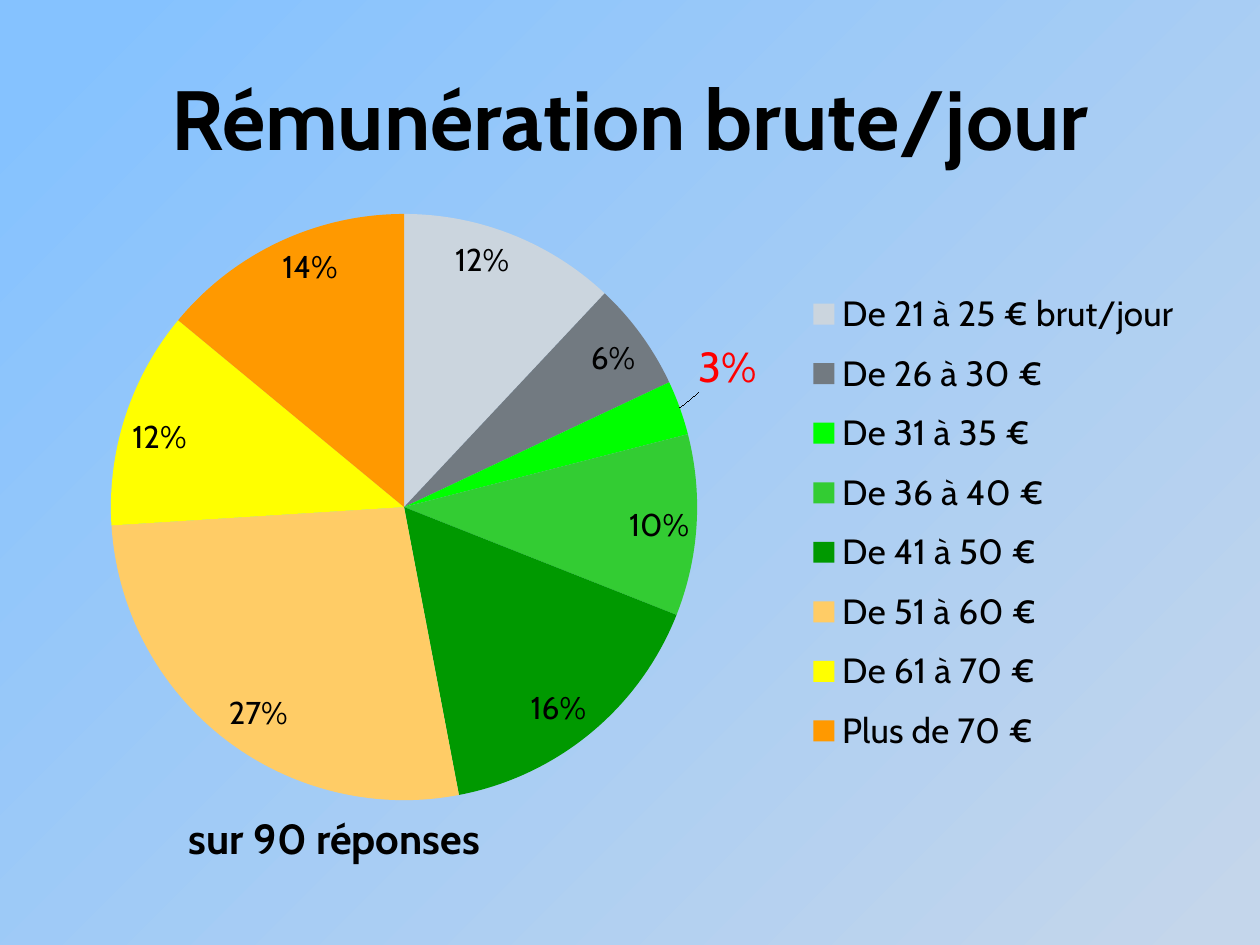
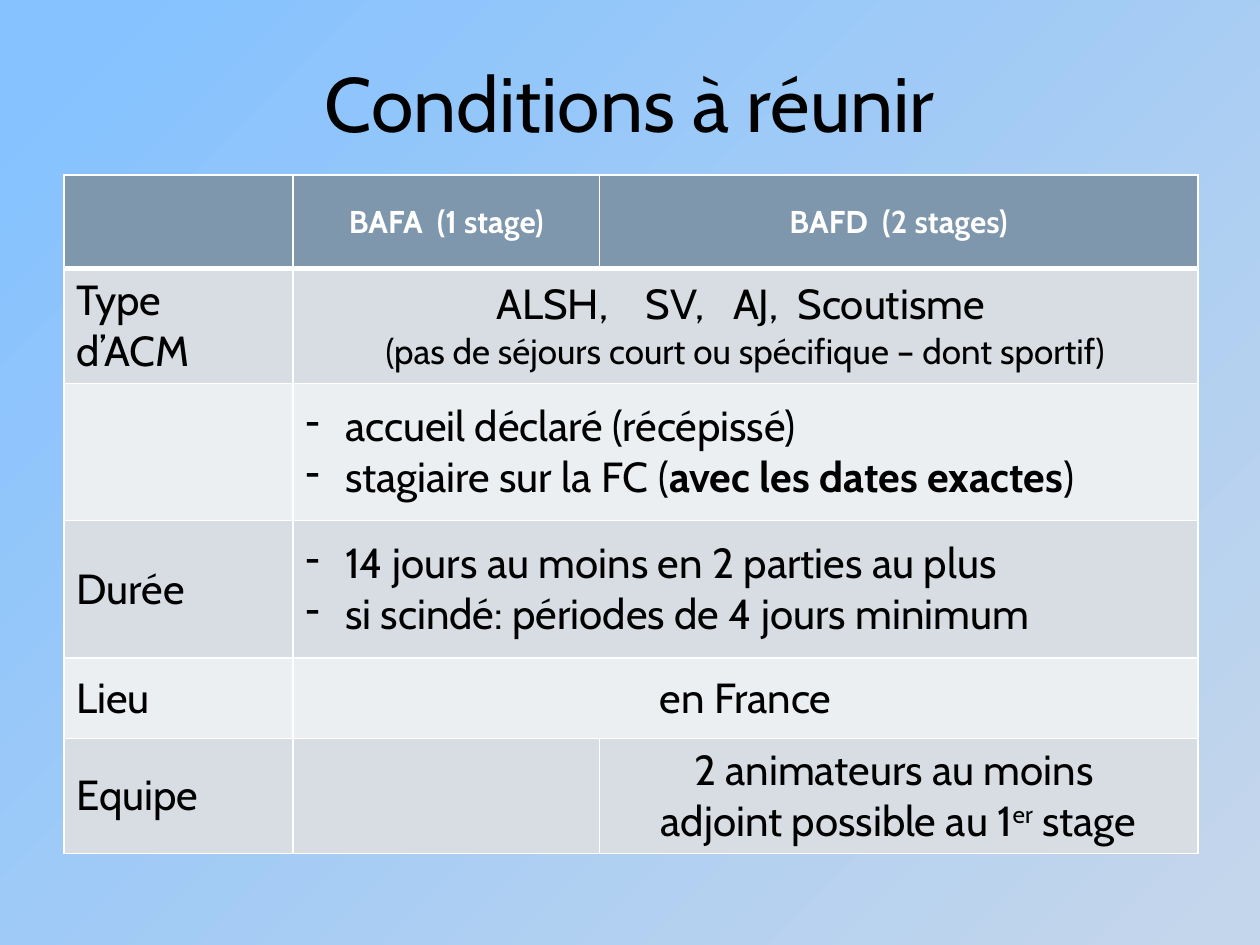
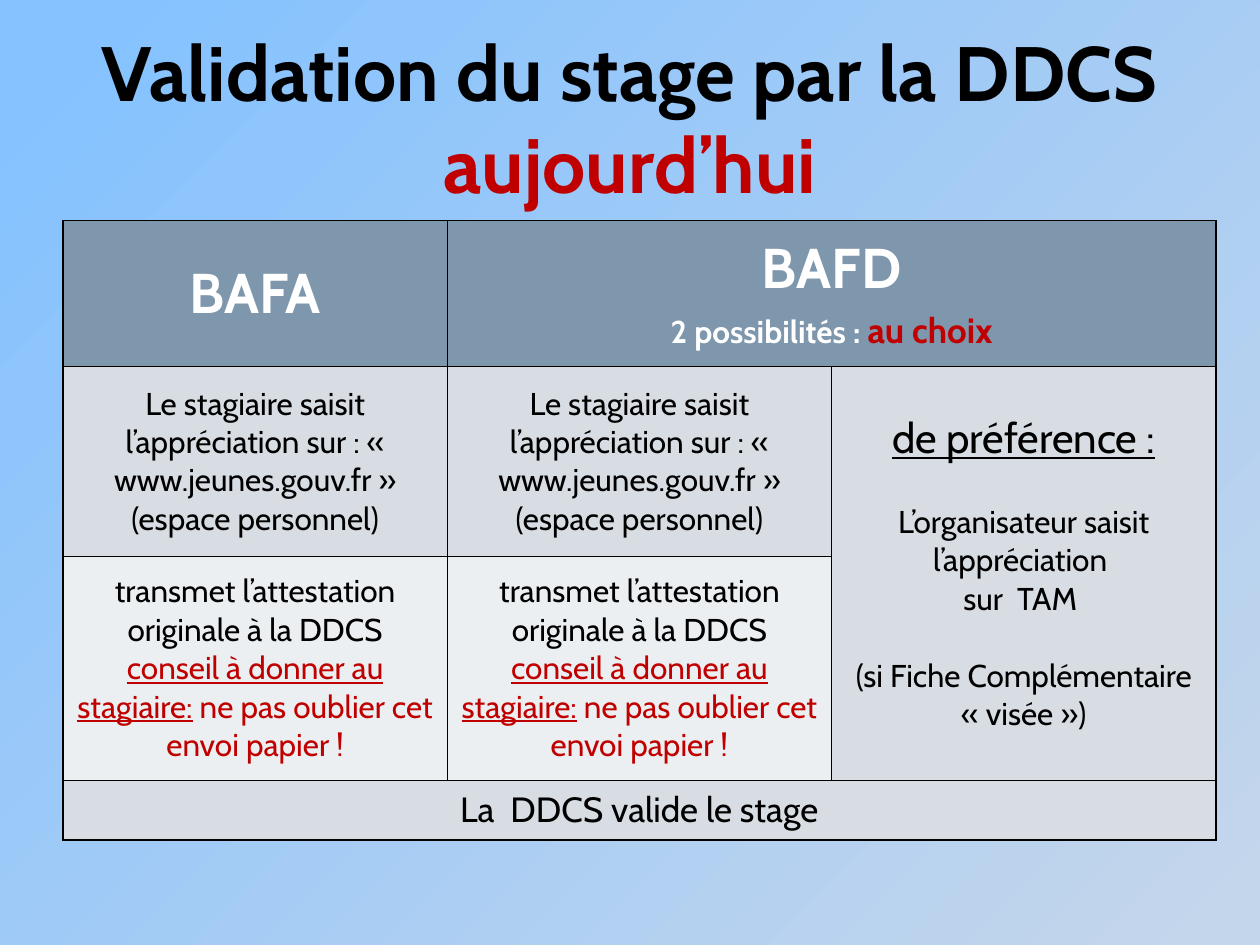
from lxml import etree
from pptx import Presentation
from pptx.chart.data import CategoryChartData
from pptx.dml.color import RGBColor
from pptx.enum.chart import XL_CHART_TYPE, XL_LABEL_POSITION, XL_LEGEND_POSITION
from pptx.enum.text import MSO_ANCHOR, MSO_AUTO_SIZE, PP_ALIGN
from pptx.oxml.ns import qn
from pptx.util import Pt

PIE = XL_CHART_TYPE.PIE
INSIDE_END, OUTSIDE_END = XL_LABEL_POSITION.INSIDE_END, XL_LABEL_POSITION.OUTSIDE_END
LEGEND_RIGHT = XL_LEGEND_POSITION.RIGHT
MIDDLE = MSO_ANCHOR.MIDDLE
NO_FIT = MSO_AUTO_SIZE.NONE
LEFT, CENTER = PP_ALIGN.LEFT, PP_ALIGN.CENTER

FONT = "Cabin"
TITLE_ONLY = 5
BLACK = RGBColor(0x00, 0x00, 0x00)
WHITE = RGBColor(0xFF, 0xFF, 0xFF)
RED = RGBColor(0xFF, 0x00, 0x00)
DARK_RED = RGBColor(0xC0, 0x00, 0x00)
SKY = RGBColor(0x85, 0xC2, 0xFF)
MIST = RGBColor(0xC4, 0xD6, 0xEB)
SLATE = RGBColor(0x7E, 0x97, 0xAD)
GREY = RGBColor(0xD8, 0xDD, 0xE3)
PALE = RGBColor(0xEC, 0xEF, 0xF1)

# Pay per day: category, percent, slice colour
PAY = [
    ("De 21 à 25 € brut/jour", 12, RGBColor(0xCB, 0xD5, 0xDE)),
    ("De 26 à 30 €", 6, RGBColor(0x72, 0x7A, 0x81)),
    ("De 31 à 35 €", 3, RGBColor(0x00, 0xFF, 0x00)),
    ("De 36 à 40 €", 10, RGBColor(0x33, 0xCC, 0x33)),
    ("De 41 à 50 €", 16, RGBColor(0x00, 0x99, 0x00)),
    ("De 51 à 60 €", 27, RGBColor(0xFF, 0xCC, 0x66)),
    ("De 61 à 70 €", 12, RGBColor(0xFF, 0xFF, 0x00)),
    ("Plus de 70 €", 14, RGBColor(0xFF, 0x99, 0x00)),
]
SMALLEST = 2


# Content helpers: a paragraph is a dict holding (text, style) spans
def line(*spans, align=CENTER, before=0, bullet=False):
    return {"spans": spans, "align": align, "before": before, "bullet": bullet}


def plain(text, size=24, align=CENTER, before=0, **style):
    return line((text, {"size": size, **style}), align=align, before=before)


def dashed(*spans):
    return line(*spans, align=LEFT, bullet=True)


BODY = {"size": 24}
HEAD = {"bold": True, "color": WHITE}
CONDITIONS = {
    "left": 36.5, "top": 100,
    "columns": [131, 175, 342],
    "rows": [53.5, 52, 78.5, 78.5, 46, 59],
    "fills": [SLATE, GREY, PALE, GREY, PALE, GREY],
    "border": WHITE, "header_rule": 3,
    "merges": [(row, 1, row, 2) for row in range(1, 5)],
    "cells": {
        (0, 1): [plain("BAFA  (1 stage)", 18, **HEAD)],
        (0, 2): [plain("BAFD  (2 stages)", 18, **HEAD)],
        (1, 0): [plain("Type d’ACM", align=LEFT)],
        (1, 1): [plain("ALSH,    SV,   AJ,  Scoutisme "),
                 plain("(pas de séjours court ou spécifique – dont sportif)", 20)],
        (2, 1): [dashed(("accueil déclaré (récépissé)", BODY)),
                 dashed(("stagiaire sur la FC (", BODY),
                        ("avec les dates exactes", {"size": 24, "bold": True}),
                        (")", BODY))],
        (3, 0): [plain("Durée", align=LEFT)],
        (3, 1): [dashed(("14 jours au moins en 2 parties au plus", BODY)),
                 dashed(("si scindé: périodes de 4 jours minimum", BODY))],
        (4, 0): [plain("Lieu", align=LEFT)],
        (4, 1): [plain("en France")],
        (5, 0): [plain("Equipe", align=LEFT)],
        (5, 2): [plain("2 animateurs au moins "),
                 line(("adjoint possible au 1", BODY),
                      ("er", {"size": 24, "raised": True}), (" stage", BODY))],
    },
}

ENTRY = [plain("Le stagiaire saisit l’appréciation sur : « www.jeunes.gouv.fr »", 18),
         plain("(espace personnel)", 18)]
MAILING = [
    plain("transmet l’attestation originale à la DDCS", 18),
    line(("conseil à donner au stagiaire:",
          {"size": 18, "color": DARK_RED, "underline": True}),
         (" ne pas oublier cet envoi papier !", {"size": 18, "color": DARK_RED})),
]
VALIDATION = {
    "left": 36, "top": 126,
    "columns": [219.6] * 3,
    "rows": [83.5, 108.5, 128, 34],
    "fills": [SLATE, GREY, PALE, GREY],
    "border": BLACK, "header_rule": 1,
    "merges": [(0, 1, 0, 2), (1, 2, 2, 2), (3, 0, 3, 2)],
    "cells": {
        (0, 0): [plain("BAFA", 32, **HEAD)],
        (0, 1): [plain("BAFD", 32, **HEAD),
                 line(("2 possibilités : ", {"size": 18, **HEAD}),
                      ("au choix", {"size": 20, "bold": True, "color": DARK_RED}),
                      before=4)],
        (1, 0): ENTRY,
        (1, 1): ENTRY,
        (1, 2): [plain("de préférence :", underline=True),
                 plain("L’organisateur saisit l’appréciation ", 18, before=22),
                 plain("sur  TAM ", 18),
                 plain("(si Fiche Complémentaire", 18, before=22),
                 plain("« visée »)", 18)],
        (2, 0): MAILING,
        (2, 1): MAILING,
        (3, 0): [plain("La  DDCS valide le stage", 20)],
    },
}


# Text
def style_font(font, size, color=BLACK, bold=False, underline=False):
    font.name, font.size = FONT, Pt(size)
    font.bold, font.underline = bold, underline
    font.color.rgb = color


def write(frame, paragraphs):
    for index, content in enumerate(paragraphs):
        para = frame.add_paragraph() if index else frame.paragraphs[0]
        para.alignment = content["align"]
        para.space_before = Pt(content["before"])
        if content["bullet"]:
            props = para._p.get_or_add_pPr()
            props.set("marL", str(Pt(22.5)))
            props.set("indent", str(-Pt(22.5)))
            etree.SubElement(props, qn("a:buChar")).set("char", "-")
        for text, style in content["spans"]:
            span = para.add_run()
            span.text = text
            style_font(span.font, **{k: v for k, v in style.items() if k != "raised"})
            if "raised" in style:
                span.font._element.set("baseline", "30000")


def add_page(deck, title, size, height, bold):
    page = deck.slides.add_slide(deck.slide_layouts[TITLE_ONLY])
    box = page.shapes.title
    box.left, box.top, box.width, box.height = Pt(36), Pt(21.6), Pt(648), Pt(height)
    frame = box.text_frame
    frame.text = title
    frame.auto_size, frame.vertical_anchor = NO_FIT, MIDDLE
    para = frame.paragraphs[0]
    para.alignment = CENTER
    for span in para.runs:
        style_font(span.font, size, bold=bold)
    return page


# Tables
def set_borders(cell, color, widths):
    props = cell._tc.get_or_add_tcPr()
    for index, (side, width) in enumerate(widths.items()):
        edge = etree.Element(qn(f"a:ln{side}"), w=str(Pt(width)))
        fill = etree.SubElement(edge, qn("a:solidFill"))
        etree.SubElement(fill, qn("a:srgbClr")).set("val", str(color))
        props.insert(index, edge)


def add_grid(page, grid):
    columns, rows = grid["columns"], grid["rows"]
    table = page.shapes.add_table(
        len(rows), len(columns), Pt(grid["left"]), Pt(grid["top"]),
        Pt(sum(columns)), Pt(sum(rows))).table
    table.first_row = table.horz_banding = False
    for column, width in zip(table.columns, columns):
        column.width = Pt(width)
    for row, height in zip(table.rows, rows):
        row.height = Pt(height)
    for top, left, bottom, right in grid["merges"]:
        table.cell(top, left).merge(table.cell(bottom, right))
    for row, color in enumerate(grid["fills"]):
        widths = {"L": 1, "R": 1,
                  "T": grid["header_rule"] if row == 1 else 1,
                  "B": grid["header_rule"] if row == 0 else 1}
        for column in range(len(columns)):
            cell = table.cell(row, column)
            cell.vertical_anchor = MIDDLE
            cell.fill.solid()
            cell.fill.fore_color.rgb = color
            set_borders(cell, grid["border"], widths)
            write(cell.text_frame, grid["cells"].get((row, column), []))


# Chart
def set_layout(parent, index, **values):
    """Give a chart part a manual layout, as fractions of the chart."""
    for old in parent.findall(qn("c:layout")):
        parent.remove(old)
    layout = etree.Element(qn("c:layout"))
    manual = etree.SubElement(layout, qn("c:manualLayout"))
    for name, value in values.items():
        etree.SubElement(manual, qn(f"c:{name}")).set("val", str(value))
    parent.insert(index, layout)


def add_pay_chart(page):
    data = CategoryChartData()
    data.categories = [name for name, _, _ in PAY]
    data.add_series("Series 1", [value for _, value, _ in PAY])
    chart = page.shapes.add_chart(
        PIE, Pt(36.5), Pt(111.6), Pt(648), Pt(356.4), data).chart
    chart.has_title = False
    style_font(chart.font, 10)
    chart.has_legend = True
    chart.legend.position = LEGEND_RIGHT
    chart.legend.include_in_layout = False
    style_font(chart.legend.font, 20)
    chart.plots[0].vary_by_categories = True

    series = chart.plots[0].series[0]
    for index, (_, _, color) in enumerate(PAY):
        piece = series.points[index].format
        piece.fill.solid()
        piece.fill.fore_color.rgb = color
        piece.line.fill.background()

    labels = series.data_labels
    labels.show_percentage, labels.show_value = True, False
    labels.number_format, labels.number_format_is_linked = "0%", False
    labels.position = INSIDE_END
    style_font(labels.font, 18)

    # The smallest slice has its label outside, with a leader line
    label = series.points[SMALLEST].data_label
    style_font(label.font, 24, RED)
    label.position = OUTSIDE_END
    element = chart.element.xpath(".//c:dLbl")[0]
    element.find(qn("c:showVal")).set("val", "0")
    element.find(qn("c:showPercent")).set("val", "1")
    set_layout(element, 1, x=0.01, y=-0.02)

    edges = {"xMode": "edge", "yMode": "edge"}
    set_layout(chart.element.xpath(".//c:plotArea")[0], 0, layoutTarget="inner",
               **edges, x=0.04, y=0.03, w=0.52, h=0.94)
    set_layout(chart.legend._element, 1, **edges, x=0.65, y=0.13, w=0.34, h=0.79)


def main():
    deck = Presentation()
    deck.slide_width, deck.slide_height = Pt(720), Pt(540)

    # Shared background
    fill = deck.slide_master.background.fill
    fill.gradient()
    fill.gradient_angle = 315
    for stop, color, position in zip(fill.gradient_stops, (SKY, MIST), (0.05, 0.98)):
        stop.color.rgb, stop.position = color, position

    # Pay per day
    page = add_page(deck, "Rémunération brute/jour", 48, 90, True)
    add_pay_chart(page)
    box = page.shapes.add_textbox(Pt(100.8), Pt(460.8), Pt(482), Pt(36))
    box.text_frame.word_wrap = True
    write(box.text_frame, [plain("sur 90 réponses", align=LEFT, bold=True)])

    # Conditions
    add_grid(add_page(deck, "Conditions à réunir", 44, 73, False), CONDITIONS)

    # Validation
    page = add_page(deck, "Validation du stage par la DDCS\vaujourd’hui", 44, 90, True)
    page.shapes.title.text_frame.paragraphs[0].runs[-1].font.color.rgb = DARK_RED
    add_grid(page, VALIDATION)

    deck.save("out.pptx")


if __name__ == "__main__":
    main()
